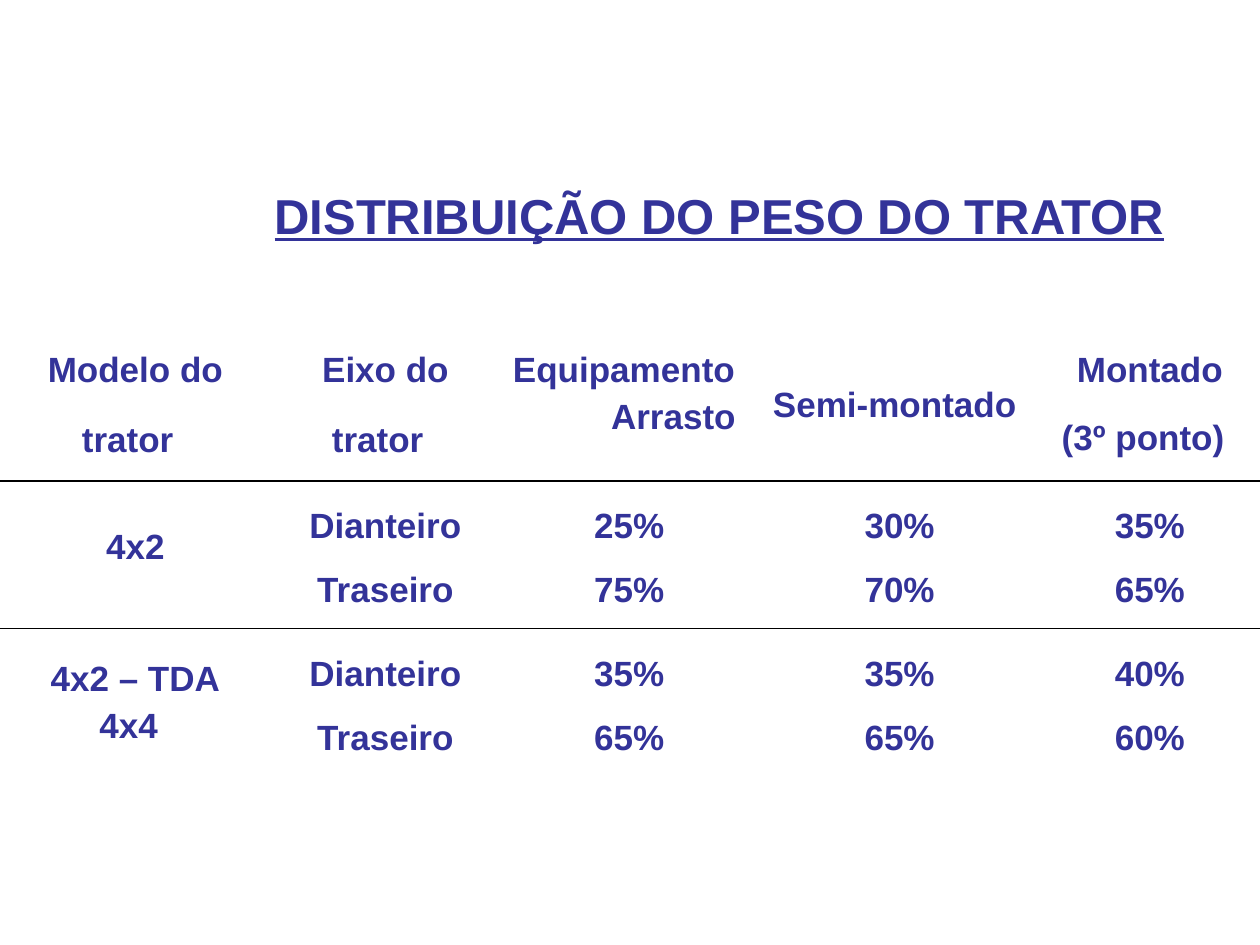
from lxml import etree
from pptx import Presentation
from pptx.dml.color import RGBColor
from pptx.enum import text
from pptx.oxml import ns
from pptx.util import Cm, Pt

NAVY = RGBColor(0x33, 0x33, 0x99)
WHITE = RGBColor(0xFF, 0xFF, 0xFF)
RULE = "000000"
CENTER, LEFT, RIGHT = text.PP_ALIGN.CENTER, text.PP_ALIGN.LEFT, text.PP_ALIGN.RIGHT

TITLE = "DISTRIBUIÇÃO DO PESO DO TRATOR"
HEADERS = [
    (["Modelo do trator"], dict(spacing=1.2, tail=32)),
    (["Eixo do trator"], dict(spacing=1.2, tail=32)),
    (["Equipamento", "Arrasto"], dict(spacing=1.2, gap=0, last_align=RIGHT, right=0.46)),
    (["Semi-montado "], dict(spacing=2.1)),
    (["Montado", "(3º ponto)"], dict(spacing=1.2, tail=28)),
]
AXLES = ["Dianteiro", "Traseiro"]
MODELS = [
    ((["4x2"], dict(top=0.94)),
     [["25%", "75%"], ["30%", "70%"], ["35%", "65%"]]),
    ((["4x2 – TDA", "4x4"], dict(spacing=0.8, tail=28, top=0.76)),
     [["35%", "65%"], ["35%", "65%"], ["40%", "60%"]]),
]
COL_WIDTHS = [5.46, 4.62, 5.21, 5.69, 4.4]
ROW_HEIGHTS = [2.92, 2.97, 2.97, 1.27, 1.45]
RULED_ROWS = 2


def write(tf, lines, size=20, align=CENTER, last_align=None, spacing=1.0,
          gap=3.2, bold=True, underline=None, tail=None):
    tf.word_wrap = True
    for i, line in enumerate(lines):
        p = tf.add_paragraph() if i else tf.paragraphs[0]
        last = i == len(lines) - 1
        p.alignment = last_align if last and last_align else align
        p.line_spacing = spacing
        p.space_before = Pt(gap if i else 0)
        parts = [(line, size, bold)]
        if tail and last:
            parts.append((" ", tail, False))
        for content, pts, heavy in parts:
            r = p.add_run()
            r.text = content
            r.font.name, r.font.size = "Arial", Pt(pts)
            r.font.bold, r.font.underline = heavy, underline
            r.font.color.rgb = NAVY


def fill_cell(cell, lines, top=0.13, right=0.25, **fmt):
    cell.margin_top, cell.margin_bottom = Cm(top), Cm(0.13)
    cell.margin_left, cell.margin_right = Cm(0.25), Cm(right)
    write(cell.text_frame, lines, **fmt)


def add_rules(cell, sides):
    tc_pr = cell._tc.get_or_add_tcPr()
    for i, side in enumerate(sides):
        ln = etree.Element(ns.qn(f"a:ln{side}"), w=str(Pt(1)))
        fill = etree.SubElement(ln, ns.qn("a:solidFill"))
        etree.SubElement(fill, ns.qn("a:srgbClr"), val=RULE)
        tc_pr.insert(i, ln)


def main():
    prs = Presentation()
    prs.slide_width, prs.slide_height = Cm(25.4), Cm(19.05)
    s = prs.slides.add_slide(prs.slide_layouts[5])

    title = s.shapes.title
    title.left, title.top, title.width, title.height = map(Cm, (5.28, 3.61, 19.1, 1.45))
    tf = title.text_frame
    tf.vertical_anchor = text.MSO_ANCHOR.TOP
    tf.auto_size = text.MSO_AUTO_SIZE.NONE
    write(tf, [TITLE], size=28, align=LEFT, underline=True)

    table = s.shapes.add_table(
        len(ROW_HEIGHTS), len(COL_WIDTHS), Cm(0), Cm(6.78),
        Cm(sum(COL_WIDTHS)), Cm(sum(ROW_HEIGHTS))).table
    table.first_row = table.horz_banding = False
    for col, width in zip(table.columns, COL_WIDTHS):
        col.width = Cm(width)
    for row, height in zip(table.rows, ROW_HEIGHTS):
        row.height = Cm(height)

    rows = [HEADERS]
    for model, shares in MODELS:
        rows.append([model] + [(pair, dict(spacing=1.5)) for pair in [AXLES] + shares])
    for row, entries in zip(table.rows, rows):
        for cell, (lines, fmt) in zip(row.cells, entries):
            fill_cell(cell, lines, **fmt)

    for i, row in enumerate(table.rows):
        sides = ("T" if 0 < i <= RULED_ROWS else "") + ("B" if i < RULED_ROWS else "")
        for cell in row.cells:
            cell.fill.solid()
            cell.fill.fore_color.rgb = WHITE
            add_rules(cell, sides)

    prs.save("out.pptx")


if __name__ == "__main__":
    main()
